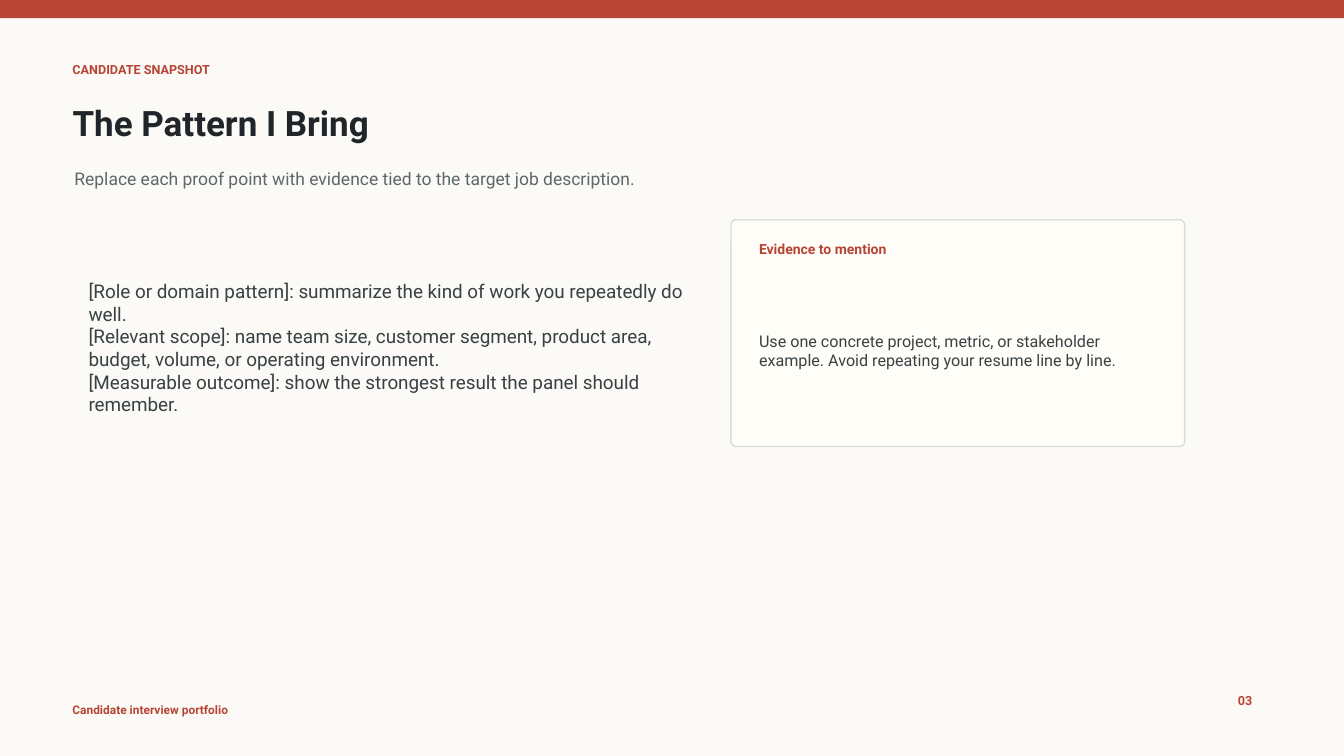
from dataclasses import dataclass

from pptx import Presentation
from pptx.dml.color import RGBColor
from pptx.enum.shapes import MSO_SHAPE
from pptx.enum.text import MSO_ANCHOR, MSO_AUTO_SIZE, PP_ALIGN
from pptx.util import Inches, Pt


@dataclass(frozen=True)
class Theme:
    font: str = "Roboto"
    background: str = "FBFAF6"
    accent: str = "B74434"
    heading: str = "1F2528"
    muted: str = "5E686B"
    body: str = "384144"
    card: str = "FFFDF8"
    border: str = "D8DDD7"
    title_size: float = 25
    list_size: float = 13.5
    subtitle_size: float = 12.5
    card_size: float = 11.5
    card_label_size: float = 10
    label_size: float = 9
    footer_size: float = 8.5


def write_text(shape, text, size, color, bold=False):
    """Fill a shape with left-aligned, vertically centred text in one style."""
    frame = shape.text_frame
    frame.text = text
    frame.word_wrap = True
    frame.auto_size = MSO_AUTO_SIZE.NONE
    frame.vertical_anchor = MSO_ANCHOR.MIDDLE
    for paragraph in frame.paragraphs:
        paragraph.alignment = PP_ALIGN.LEFT
        for run in paragraph.runs:
            run.font.name = theme.font
            run.font.size = Pt(size)
            run.font.bold = bold
            run.font.color.rgb = RGBColor.from_string(color)


def add_panel(kind, left, top, width, height, fill):
    panel = slide.shapes.add_shape(
        kind, Inches(left), Inches(top), Inches(width), Inches(height))
    panel.shadow.inherit = False
    panel.fill.solid()
    panel.fill.fore_color.rgb = RGBColor.from_string(fill)
    panel.line.fill.background()
    return panel


theme = Theme()
presentation = Presentation()
presentation.slide_width = Inches(13.33)
presentation.slide_height = Inches(7.5)
slide = presentation.slides.add_slide(presentation.slide_layouts[5])
slide.background.fill.solid()
slide.background.fill.fore_color.rgb = RGBColor.from_string(theme.background)

# Title
title = slide.shapes.title
title.left, title.top = Inches(0.62), Inches(0.94)
title.width, title.height = Inches(9.8), Inches(0.55)
write_text(title, "The Pattern I Bring", theme.title_size, theme.heading, True)

# Top bar and evidence card
add_panel(MSO_SHAPE.RECTANGLE, 0, 0, 13.33, 0.18, theme.accent)
card = add_panel(MSO_SHAPE.ROUNDED_RECTANGLE, 7.25, 2.18, 4.5, 2.25, theme.card)
card.adjustments[0] = 0.022
card.line.color.rgb = RGBColor.from_string(theme.border)
card.line.width = Pt(1)

proof_points = "\n".join([
    "[Role or domain pattern]: summarize the kind of work you repeatedly do well.",
    "[Relevant scope]: name team size, customer segment, product area, budget, "
    "volume, or operating environment.",
    "[Measurable outcome]: show the strongest result the panel should remember.",
])

# Text boxes: left, top, width, height, text, size, colour, bold
text_boxes = [
    (0.62, 0.58, 4.8, 0.22, "CANDIDATE SNAPSHOT",
     theme.label_size, theme.accent, True),
    (0.64, 1.56, 10.8, 0.42,
     "Replace each proof point with evidence tied to the target job description.",
     theme.subtitle_size, theme.muted, False),
    (0.78, 2.3, 6.1, 2.3, proof_points, theme.list_size, theme.body, False),
    (7.43, 2.34, 4.14, 0.25, "Evidence to mention",
     theme.card_label_size, theme.accent, True),
    (7.43, 2.66, 4.14, 1.63,
     "Use one concrete project, metric, or stakeholder example. "
     "Avoid repeating your resume line by line.",
     theme.card_size, theme.body, False),
    (0.62, 6.94, 3, 0.2, "Candidate interview portfolio",
     theme.footer_size, theme.accent, True),
    (12.18, 6.82, 0.5, 0.25, "03", theme.label_size, theme.accent, True),
]
for left, top, width, height, text, size, color, bold in text_boxes:
    text_box = slide.shapes.add_textbox(
        Inches(left), Inches(top), Inches(width), Inches(height))
    write_text(text_box, text, size, color, bold)

presentation.save("out.pptx")
